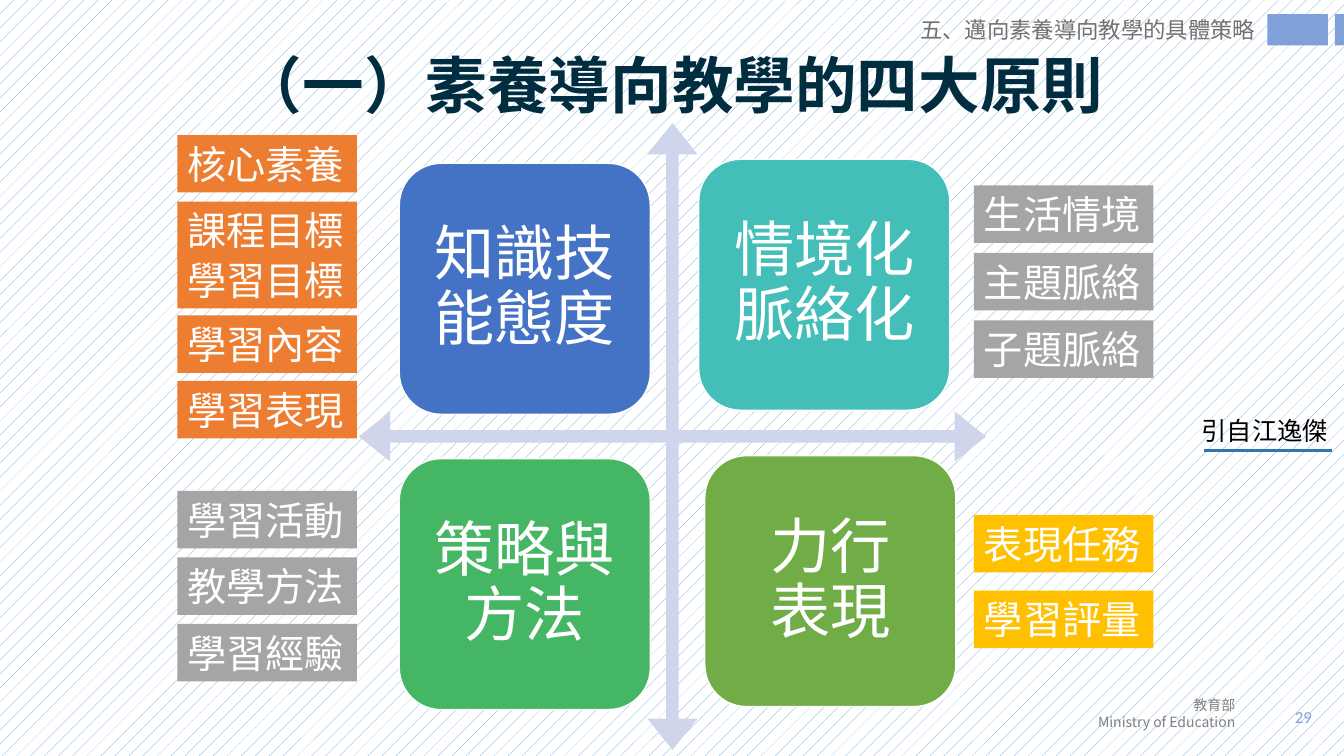
from lxml.etree import SubElement
from pptx import Presentation
from pptx.dml.color import RGBColor as RGB
from pptx.enum.dml import MSO_PATTERN
from pptx.enum.shapes import MSO_CONNECTOR, MSO_SHAPE as SHAPE
from pptx.enum.text import MSO_ANCHOR as ANCHOR, MSO_AUTO_SIZE as FIT, PP_ALIGN as ALIGN
from pptx.oxml.ns import qn
from pptx.util import Pt

PX = 9144  # 100 px to the inch
CJK, LATIN = "Noto Sans CJK SC", "Calibri"

WHITE = RGB(0xFF, 0xFF, 0xFF)
BLACK = RGB(0x00, 0x00, 0x00)
NAVY = RGB(0x00, 0x2D, 0x40)
PATTERN_BLUE = RGB(0x5B, 0x9B, 0xD5)
PALE_BLUE = RGB(0xCF, 0xD5, 0xEA)
TAB_BLUE = RGB(0x80, 0xA0, 0xDA)
LINE_BLUE = RGB(0x2E, 0x75, 0xB6)
BLUE = RGB(0x44, 0x72, 0xC4)
TEAL = RGB(0x43, 0xBE, 0xB9)
GREEN = RGB(0x45, 0xB6, 0x64)
OLIVE = RGB(0x70, 0xAD, 0x47)
ORANGE = RGB(0xED, 0x7D, 0x31)
GOLD = RGB(0xFF, 0xC0, 0x00)
GRAY = RGB(0xA5, 0xA5, 0xA5)
HEADER_GRAY = RGB(0x76, 0x71, 0x71)
FOOTER_GRAY = RGB(0x80, 0x80, 0x80)

CARDS = [
    (396, 162, BLUE, "知識技能態度"),
    (693, 158, TEAL, "情境化脈絡化"),
    (396, 455, GREEN, "策略與方法"),
    (699, 452, OLIVE, "力行 表現"),
]
# Left edge, tops, colour and wording of each column of tags
TAG_COLUMNS = [
    (176, (134, 200, 249, 313, 378), ORANGE,
     ("核心素養", "課程目標", "學習目標", "學習內容", "學習表現")),
    (176, range(487, 620, 66), GRAY, ("學習活動", "教學方法", "學習經驗")),
    (966, range(184, 319, 67), GRAY, ("生活情境", "主題脈絡", "子題脈絡")),
    (966, range(511, 587, 75), GOLD, ("表現任務", "學習評量")),
]


def emu(*lengths):
    return [n * PX for n in lengths]


def write(shape, lines, size, color, align=ALIGN.LEFT, anchor=ANCHOR.TOP,
          font=CJK, bold=False, spacing=None, wrap=True):
    tf = shape.text_frame
    tf.word_wrap = wrap
    tf.auto_size = FIT.NONE
    tf.vertical_anchor = anchor
    tf.text = lines
    for p in tf.paragraphs:
        p.alignment = align
        if spacing:
            p.line_spacing = spacing
        p.font.size = Pt(size)
        p.font.bold = bold
        p.font.color.rgb = color
        p.font.name = font
        # East Asian typeface
        props = p._p.get_or_add_pPr().get_or_add_defRPr()
        SubElement(props, qn("a:ea"), typeface=font)
    return tf


def add_box(s, box, color, kind=SHAPE.RECTANGLE):
    sp = s.shapes.add_shape(kind, *emu(*box))
    sp.shadow.inherit = False
    sp.fill.solid()
    sp.fill.fore_color.rgb = color
    sp.line.fill.background()
    return sp


def add_text(s, box, lines, size, color, **style):
    return write(s.shapes.add_textbox(*emu(*box)), lines, size, color, **style)


def add_card(s, left, top, color, label):
    sp = add_box(s, (left, top, 249, 249), color, SHAPE.ROUNDED_RECTANGLE)
    sp.line.color.rgb = WHITE
    sp.line.width = Pt(1)
    tf = write(sp, label, 43, WHITE, align=ALIGN.CENTER,
               anchor=ANCHOR.MIDDLE, spacing=0.9)
    tf.margin_left = tf.margin_right = tf.margin_top = tf.margin_bottom = 18 * PX


def add_tags(s, left, tops, color, labels):
    for top, label in zip(tops, labels):
        sp = add_box(s, (left, top, 178, 57), color)
        write(sp, label, 28, WHITE, wrap=False)


def add_line(s, x1, y1, x2, y2, color, width):
    line = s.shapes.add_connector(MSO_CONNECTOR.STRAIGHT, *emu(x1, y1, x2, y2))
    line.line.color.rgb = color
    line.line.width = Pt(width)
    SubElement(line._element.spPr, qn("a:effectLst"))


def main():
    prs = Presentation()
    prs.slide_width, prs.slide_height = emu(1333, 750)
    s = prs.slides.add_slide(prs.slide_layouts[6])

    # Patterned background
    fill = s.background.fill
    fill.patterned()
    fill.pattern = MSO_PATTERN.PERCENT_5
    fill.fore_color.rgb = PATTERN_BLUE
    fill.back_color.rgb = WHITE

    # Four principles around the crossed arrows
    arrows = add_box(s, (356, 122, 622, 622), PALE_BLUE, SHAPE.QUAD_ARROW)
    for i, value in enumerate((0.02, 0.04, 0.05)):
        arrows.adjustments[i] = value
    for card in CARDS:
        add_card(s, *card)

    # Title and tags
    add_text(s, (217, 35, 900, 105), "（一）素養導向教學的四大原則", 44, NAVY,
             align=ALIGN.CENTER, anchor=ANCHOR.MIDDLE, bold=True, spacing=0.9)
    for column in TAG_COLUMNS:
        add_tags(s, *column)

    # Source credit
    add_text(s, (1182, 407, 146, 40), "引自江逸傑", 18, BLACK, wrap=False)
    add_line(s, 1194, 447, 1321, 447, LINE_BLUE, 2.25)

    # Section header
    for left, width in ((1257, 60), (1324, 9)):
        add_box(s, (left, 14, width, 31), TAB_BLUE)
    add_text(s, (903, 11, 366, 64), "五、邁向素養導向教學的具體策略", 16, HEADER_GRAY)

    # Footer
    add_text(s, (1086, 696, 225, 30), "29", 12, TAB_BLUE, align=ALIGN.RIGHT,
             anchor=ANCHOR.MIDDLE, font=LATIN)
    add_text(s, (1075, 686, 160, 44), "教育部\nMinistry of Education", 10,
             FOOTER_GRAY, align=ALIGN.RIGHT, wrap=False)

    prs.save("out.pptx")


if __name__ == "__main__":
    main()
